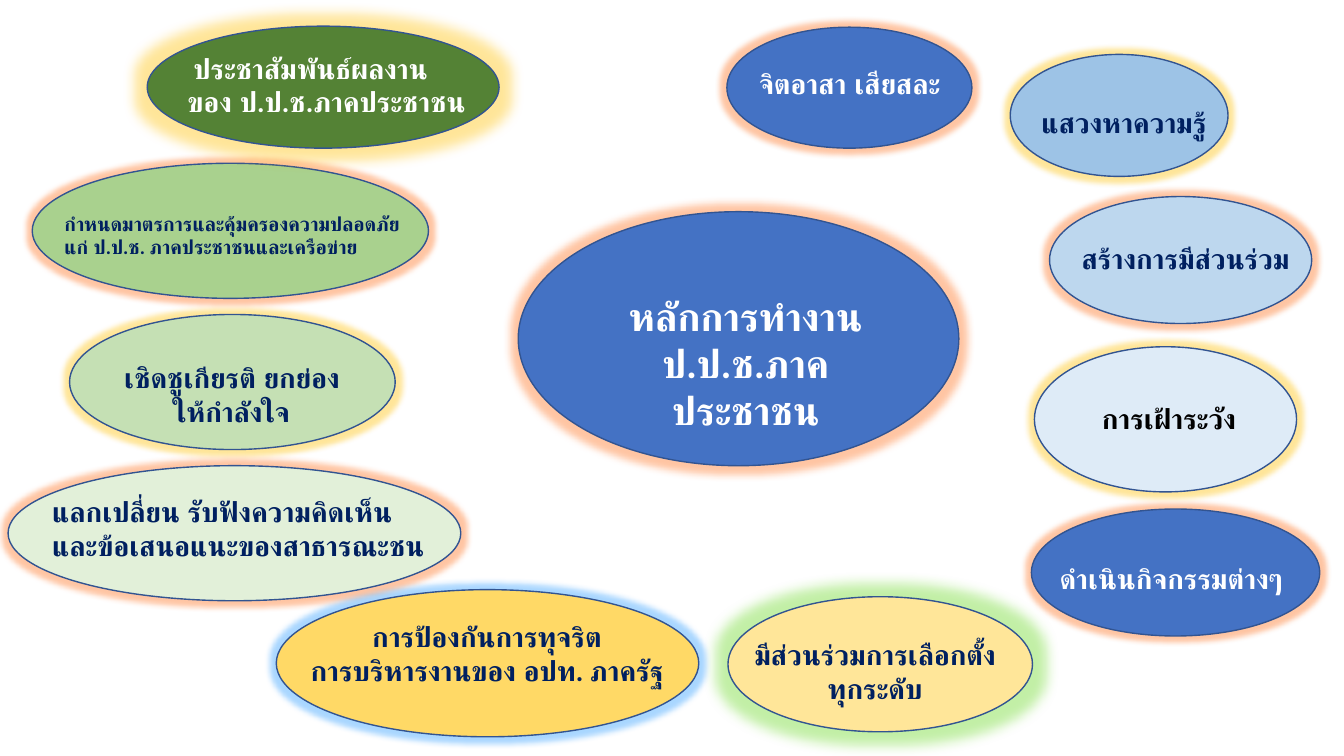
import pptx
import pptx.dml.color
import pptx.enum.shapes
import pptx.enum.text
import pptx.oxml
import pptx.oxml.ns
import pptx.util

WIDTH, HEIGHT = 13.33, 7.5
FONT = "Calibri"
NAVY, WHITE, BLACK = "002060", "FFFFFF", "000000"
BLUE, OUTLINE = "4472C4", "325491"
ORANGE, YELLOW, SKY, LIME = "FF6F1A", "FFC000", "2A9BFF", "68D822"
LEFT = pptx.enum.text.PP_ALIGN.LEFT
CENTER = pptx.enum.text.PP_ALIGN.CENTER

OVALS = [
    (0.69, 3.12, 3.23, 1.34, "C5E0B4", YELLOW, 8),
    (0.32, 1.62, 3.93, 1.34, "A9D18E", ORANGE, 8),
    (0.08, 4.62, 4.49, 1.34, "E2F0D9", ORANGE, 8),
    (7.22, 5.92, 3.02, 1.34, "FFE699", LIME, 18),
    (2.74, 5.85, 4.19, 1.46, "FFD966", SKY, 8),
    (10.23, 5.05, 2.86, 1.26, BLUE, ORANGE, 8),
    (1.46, 0.26, 3.49, 1.21, "548235", YELLOW, 18),
    (10.26, 3.44, 2.6, 1.44, "DEEBF7", YELLOW, 8),
    (10.41, 1.95, 2.6, 1.26, "BDD7EE", ORANGE, 8),
    (10.02, 0.54, 2.16, 1.21, "9DC3E6", YELLOW, 8),
    (7.21, 0.27, 2.43, 1.2, BLUE, ORANGE, 8),
    (5.14, 2.1, 4.37, 2.52, BLUE, ORANGE, 11),
]

LABELS = [
    (7.37, 0.61, 2.09, 0.44, ["จิตอาสา เสียสละ"], WHITE, 20, LEFT, 0.06),
    (10.23, 1, 1.91, 0.44, ["แสวงหาความรู้"], NAVY, 20, LEFT, 0),
    (10.63, 2.35, 2.28, 0.44, ["สร้างการมีส่วนร่วม"], NAVY, 20, LEFT, 0),
    (10.83, 3.93, 1.7, 0.44, ["การเฝ้าระวัง"], BLACK, 20, LEFT, 0),
    (10.41, 5.52, 2.49, 0.44, ["ดำเนินกิจกรรมต่างๆ"], WHITE, 20, LEFT, 0),
    (7.25, 6.28, 2.86, 0.77, ["มีส่วนร่วมการเลือกตั้งทุกระดับ"], NAVY, 20, CENTER, 0),
    (2.88, 6.1, 3.9, 0.77, ["การป้องกันการทุจริต", "การบริหารงานของ อปท. ภาครัฐ"],
     NAVY, 20, CENTER, 0),
    (0.42, 4.86, 3.9, 0.77, ["แลกเปลี่ยน รับฟังความคิดเห็น", "และข้อเสนอแนะของสาธารณะชน"],
     NAVY, 20, LEFT, 0),
    (1.04, 3.53, 2.51, 0.77, ["เชิดชูเกียรติ ยกย่องให้กำลังใจ"], NAVY, 20, CENTER, 0),
    (0.54, 2.05, 3.68, 0.57, ["กำหนดมาตรการและคุ้มครองความปลอดภัย",
                              "แก่ ป.ป.ช. ภาคประชาชนและเครือข่าย"], NAVY, 14, LEFT, 0),
    (1.76, 0.46, 3.72, 0.77, ["ประชาสัมพันธ์ผลงาน", "ของ ป.ป.ช.ภาคประชาชน"],
     WHITE, 20, LEFT, 0.06),
]


def color(value):
    return pptx.dml.color.RGBColor.from_string(value)


def box(left, top, width, height):
    return [pptx.util.Inches(length) for length in (left, top, width, height)]


def apply(target, formats):
    for name, value in formats.items():
        setattr(target, name, value)


def add_glow(shape, glow, radius):
    shape.shadow.inherit = False
    effects = shape._element.spPr.find(pptx.oxml.ns.qn("a:effectLst"))
    effects.append(pptx.oxml.parse_xml(
        f'<a:glow {pptx.oxml.ns.nsdecls("a")} rad="{pptx.util.Pt(radius)}">'
        f'<a:srgbClr val="{glow}"><a:alpha val="40000"/></a:srgbClr></a:glow>'))


def add_oval(slide, left, top, width, height, fill, glow, radius):
    shape = slide.shapes.add_shape(
        pptx.enum.shapes.MSO_SHAPE.OVAL, *box(left, top, width, height))
    shape.fill.solid()
    shape.fill.fore_color.rgb = color(fill)
    shape.line.color.rgb = color(OUTLINE)
    shape.line.width = pptx.util.Pt(1)
    add_glow(shape, glow, radius)


def write_lines(shape, lines, text_color, size, alignment, indent=0):
    frame = shape.text_frame
    apply(frame, {
        "text": "\n".join(lines),
        "word_wrap": True,
        "auto_size": pptx.enum.text.MSO_AUTO_SIZE.SHAPE_TO_FIT_TEXT,
        "vertical_anchor": pptx.enum.text.MSO_ANCHOR.TOP,
    })
    for paragraph in frame.paragraphs:
        paragraph.alignment = alignment
        for run in paragraph.runs:
            apply(run.font, {"name": FONT, "size": pptx.util.Pt(size), "bold": True})
            run.font.color.rgb = color(text_color)
    if indent:
        properties = frame.paragraphs[0]._p.get_or_add_pPr()
        properties.set("indent", str(pptx.util.Inches(indent)))


def add_label(slide, left, top, width, height, *text):
    write_lines(slide.shapes.add_textbox(*box(left, top, width, height)), *text)


def place_title(slide, lines):
    title = slide.shapes.title
    apply(title, dict(zip(("left", "top", "width", "height"), box(5.77, 2.85, 3.25, 1.04))))
    write_lines(title, lines, WHITE, 28, CENTER)
    slide.shapes._spTree.append(title._element)


def main():
    presentation = pptx.Presentation()
    presentation.slide_width = pptx.util.Inches(WIDTH)
    presentation.slide_height = pptx.util.Inches(HEIGHT)
    slide = presentation.slides.add_slide(presentation.slide_layouts[5])
    for oval in OVALS:
        add_oval(slide, *oval)
    place_title(slide, ["หลักการทำงาน", "ป.ป.ช.ภาคประชาชน"])
    for label in LABELS:
        add_label(slide, *label)
    presentation.save("out.pptx")


if __name__ == "__main__":
    main()
